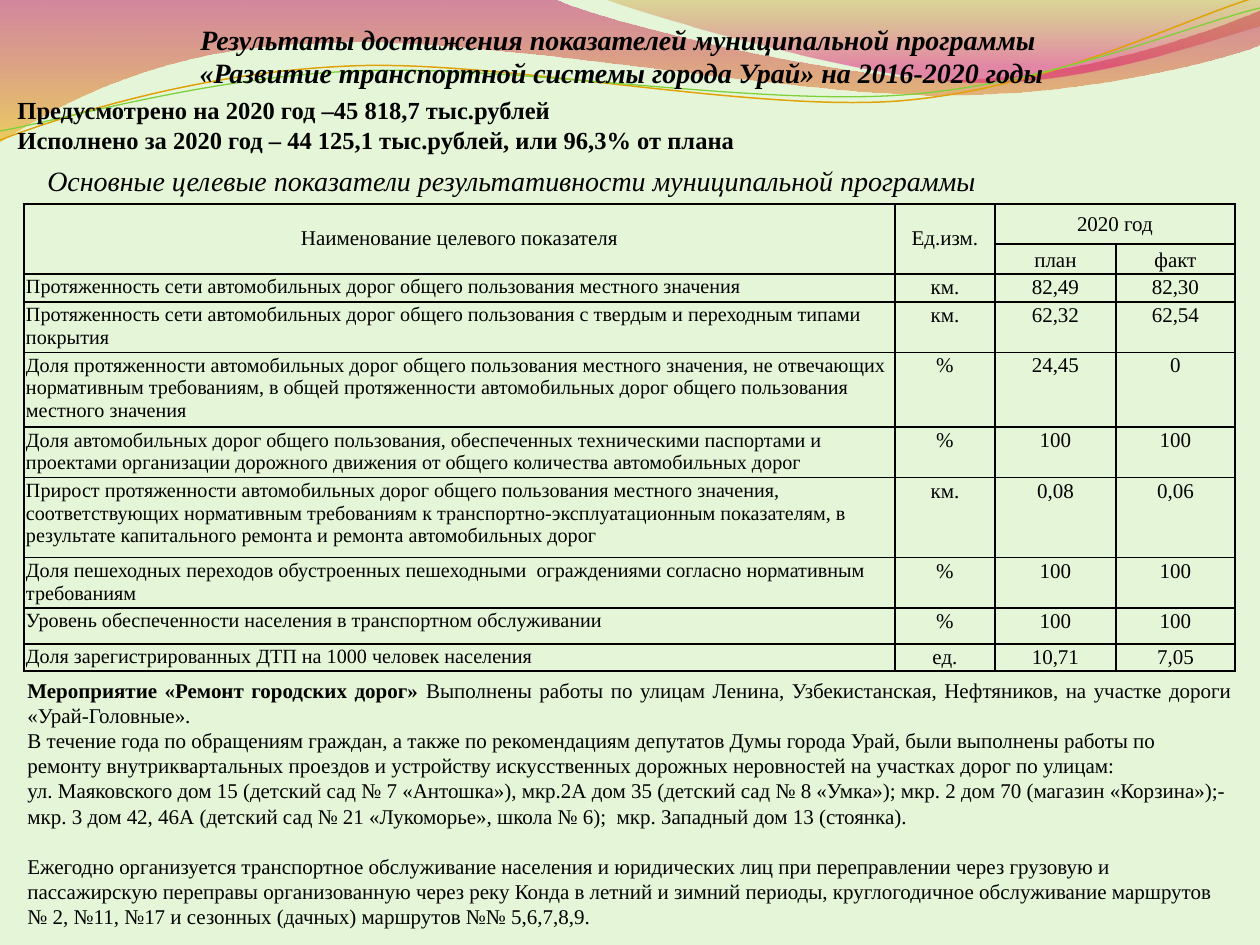
from lxml.etree import Element, SubElement
from pptx import Presentation
from pptx.dml.color import RGBColor
from pptx.enum.text import MSO_ANCHOR as Anchor, MSO_AUTO_SIZE as AutoSize, PP_ALIGN as Align
from pptx.oxml import parse_xml
from pptx.oxml.ns import nsdecls, qn
from pptx.util import Pt

PX = 914400 / 126
FONT = "Times New Roman"
BLACK = "000000"

WAVES = [
    ((0, 0), [[(554, -1)], [(600, 21), (837, 79), (955, 79)],
              [(1075, 79), (1207, 33), (1260, 11)], [(1261, 45)],
              [(1238, 55), (1096, 96), (940, 95)], [(784, 95), (481, 35), (324, 43)],
              [(163, 45), (58, 105), (-1, 142)]],
     [(0, "BD0059", 45), (1, "F0AB00", 55)]),
    ((604, -1), [[(641, 14), (859, 78), (969, 82)], [(1079, 87), (1211, 40), (1260, 26)],
                 [(1260, 0)]],
     [(0, "C38B00", 30), (0.8, "E1006B", 45)]),
]
STRANDS = [
    ((0, 140), [[(60, 117), (199, 72), (349, 66)], [(498, 59), (747, 112), (898, 101)],
                [(1050, 89), (1182, 19), (1257, -3)]], "E0A209", 0.85),
    ((0, 131), [[(59, 121), (207, 77), (357, 71)], [(508, 64), (752, 106), (903, 95)],
                [(1053, 84), (1186, 26), (1260, 8)]], "7FD13B", 0.75),
]

TITLE = ["Результаты достижения показателей муниципальной программы ",
         "«Развитие транспортной системы города Урай» на 2016-2020 годы"]
BUDGET = ["Предусмотрено на 2020 год –45 818,7 тыс.рублей",
          "Исполнено за 2020 год – 44 125,1 тыс.рублей, или 96,3% от плана"]
SUBTITLE = ["Основные целевые показатели результативности муниципальной программы"]
EVENT = "Мероприятие «Ремонт городских дорог» "
WORKS = [
    "Выполнены работы по улицам Ленина, Узбекистанская, Нефтяников, на участке дороги «Урай-Головные».",
    "В течение года по обращениям граждан, а также по рекомендациям депутатов Думы города Урай, были выполнены работы по ремонту внутриквартальных проездов и устройству искусственных дорожных неровностей на участках дорог по улицам:",
    "ул. Маяковского дом 15 (детский сад № 7 «Антошка»), мкр.2А дом 35 (детский сад № 8 «Умка»); мкр. 2 дом 70 (магазин «Корзина»);- мкр. 3 дом 42, 46А (детский сад № 21 «Лукоморье», школа № 6);  мкр. Западный дом 13 (стоянка).",
    "Ежегодно организуется транспортное обслуживание населения и юридических лиц при переправлении через грузовую и пассажирскую переправы организованную через реку Конда в летний и зимний периоды, круглогодичное обслуживание маршрутов № 2, №11, №17 и сезонных (дачных) маршрутов №№ 5,6,7,8,9.",
]

COLUMN_WIDTHS = [871, 100, 121, 119]
ROW_HEIGHTS = [40, 30, 28, 49, 75, 49, 80, 49, 36, 27]
HEADER = [["Наименование целевого показателя", "Ед.изм.", "2020 год", ""],
          ["", "", "план", "факт"]]
INDICATORS = [
    ["Протяженность сети автомобильных дорог общего пользования местного значения", "км.", "82,49", "82,30"],
    ["Протяженность сети автомобильных дорог общего пользования с твердым и переходным типами покрытия", "км.", "62,32", "62,54"],
    ["Доля протяженности автомобильных дорог общего пользования местного значения, не отвечающих нормативным требованиям, в общей протяженности автомобильных дорог общего пользования местного значения", "%", "24,45", "0"],
    ["Доля автомобильных дорог общего пользования, обеспеченных техническими паспортами и проектами организации дорожного движения от общего количества автомобильных дорог", "%", "100", "100"],
    ["Прирост протяженности автомобильных дорог общего пользования местного значения, соответствующих нормативным требованиям к транспортно-эксплуатационным показателям, в результате капитального ремонта и ремонта автомобильных дорог", "км.", "0,08", "0,06"],
    ["Доля пешеходных переходов обустроенных пешеходными  ограждениями согласно нормативным требованиям", "%", "100", "100"],
    ["Уровень обеспеченности населения в транспортном обслуживании", "%", "100", "100"],
    ["Доля зарегистрированных ДТП на 1000 человек населения", "ед.", "10,71", "7,05"],
]


def px(length):
    """Turn px into EMU."""
    return round(length * PX)


def rgb(value):
    """Turn a hex string into a colour."""
    return RGBColor.from_string(value)


def write(paragraph, text, size, align=Align.LEFT, **styles):
    """Add one formatted run to a paragraph."""
    paragraph.alignment = align
    run = paragraph.add_run()
    run.text = text
    run.font.color.rgb = rgb(BLACK)
    for name, value in {"name": FONT, "size": Pt(size), **styles}.items():
        setattr(run.font, name, value)


def add_outline(slide, left, top, start, segments, close):
    """Draw a shadowless outline of lines and cubic curves relative to a corner."""
    anchors = [(px(left + x), px(top + y)) for x, y in (start, *(s[-1] for s in segments))]
    builder = slide.shapes.build_freeform(*anchors[0])
    builder.add_line_segments(anchors[1:], close=close)
    outline = builder.convert_to_shape()
    outline.shadow.inherit = False
    steps = list(outline.element.spPr.iter(qn("a:lnTo")))
    for step, (*controls, _) in zip(steps, segments):
        for index, (x, y) in enumerate(controls):
            step.insert(index, Element(qn("a:pt"), x=str(px(left + x) - outline.left),
                                       y=str(px(top + y) - outline.top)))
        if controls:
            step.tag = qn("a:cubicBezTo")
    return outline


def add_ribbon(slide, left, top):
    """Draw the waves and strands along the top edge."""
    for start, segments, stops in WAVES:
        wave = add_outline(slide, left, top, start, segments, True)
        wave.line.fill.background()
        wave.fill.gradient()
        wave.fill.gradient_angle = 270
        for stop, (position, color, _) in zip(wave.fill.gradient_stops, stops):
            stop.position = position
            stop.color.rgb = rgb(color)
        for color, (_, _, opacity) in zip(wave.element.spPr.iter(qn("a:srgbClr")), stops):
            SubElement(color, qn("a:alpha"), val=str(opacity * 1000))
    for start, segments, color, width in STRANDS:
        strand = add_outline(slide, left, top, start, segments, False)
        strand.fill.background()
        strand.line.color.rgb = rgb(color)
        strand.line.width = Pt(width)


def add_frame(slide, left, top, width, height):
    """Add a wrapping text box that fits its text."""
    frame = slide.shapes.add_textbox(*map(px, (left, top, width, height))).text_frame
    frame.word_wrap = True
    frame.auto_size = AutoSize.SHAPE_TO_FIT_TEXT
    return frame


def add_lines(slide, box, lines, size, **styles):
    """Write one paragraph per line in a box."""
    frame = add_frame(slide, *box)
    for index, line in enumerate(lines):
        paragraph = frame.add_paragraph() if index else frame.paragraphs[0]
        write(paragraph, line, size, **styles)


def add_works(slide, box):
    """Describe the road works and the transport service."""
    frame = add_frame(slide, *box)
    event = frame.paragraphs[0]
    write(event, EVENT, 12, bold=True)
    write(event, WORKS[0], 12, Align.JUSTIFY)
    for work in WORKS[1:]:
        paragraph = frame.add_paragraph()
        write(paragraph, work, 12)
    paragraph.space_before = Pt(14.4)


def format_cell(cell, margins, anchor):
    """Clear a cell's fill and give it margins and black borders."""
    cell.fill.background()
    cell.vertical_anchor = anchor
    for side, margin in zip(("left", "top", "right", "bottom"), margins):
        setattr(cell, f"margin_{side}", px(margin))
    for index, side in enumerate("LRTB"):
        cell._tc.get_or_add_tcPr().insert(index, parse_xml(
            f'<a:ln{side} {nsdecls("a")} w="12700"><a:solidFill>'
            f'<a:srgbClr val="{BLACK}"/></a:solidFill></a:ln{side}>'))


def add_indicators(slide, left, top):
    """Tabulate planned and actual indicators."""
    rows = HEADER + INDICATORS
    box = (left, top, sum(COLUMN_WIDTHS), sum(ROW_HEIGHTS))
    table = slide.shapes.add_table(len(rows), len(COLUMN_WIDTHS), *map(px, box)).table
    table.first_row = table.horz_banding = False
    for column, width in zip(table.columns, COLUMN_WIDTHS):
        column.width = px(width)
    for r, (row, height) in enumerate(zip(rows, ROW_HEIGHTS)):
        table.rows[r].height = px(height)
        heading = r < len(HEADER)
        for c, text in enumerate(row):
            cell = table.cell(r, c)
            margins = (6, 0, 6, 0) if heading else (2, 2, 2, 0)
            format_cell(cell, margins, Anchor.MIDDLE if heading else Anchor.TOP)
            paragraph = cell.text_frame.paragraphs[0]
            if r == 1:
                paragraph.line_spacing = 1.15
            if text:
                label = c == 0 and not heading
                write(paragraph, text, 11.5 if label else 12,
                      Align.LEFT if label else Align.CENTER)
    for first, last in (((0, 0), (1, 0)), ((0, 1), (1, 1)), ((0, 2), (0, 3))):
        table.cell(*first).merge(table.cell(*last))


def main():
    """Build the programme results slide."""
    deck = Presentation()
    deck.slide_width, deck.slide_height = px(1260), px(945)
    slide = deck.slides.add_slide(deck.slide_layouts[6])
    slide.background.fill.solid()
    slide.background.fill.fore_color.rgb = rgb("E5F6D8")
    add_ribbon(slide, 0, 0)
    add_lines(slide, (-1, 16, 1245, 80), TITLE, 16, align=Align.CENTER, bold=True, italic=True)
    add_indicators(slide, 24, 204)
    add_lines(slide, (5, 89, 775, 72), BUDGET, 14, bold=True)
    add_lines(slide, (35, 157, 1121, 47), SUBTITLE, 16, italic=True)
    add_works(slide, (15, 671, 1230, 289))
    deck.save("out.pptx")


if __name__ == "__main__":
    main()
